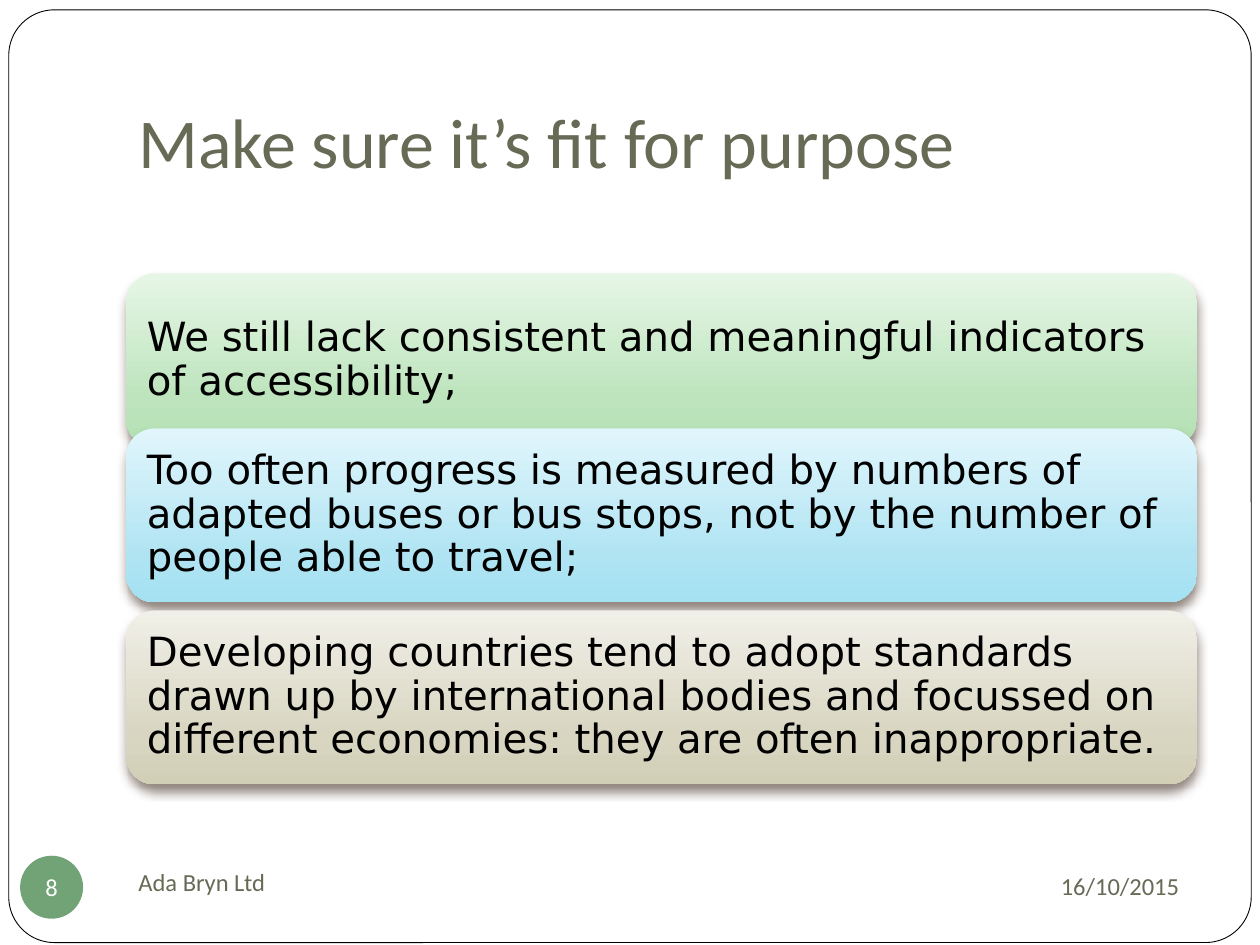
from lxml import etree
from pptx import Presentation
from pptx.dml.color import RGBColor
from pptx.enum import shapes, text
from pptx.oxml import ns
from pptx.util import Pt

HUES = {"ink": "000000", "olive": "676A55", "green": "72A376",
        "white": "FFFFFF", "shade": "4E3B30"}
STOPS = (0, 72, 100)
CARDS = [
    (156.2, ("E6F6E6", "BDE4BD", "B3E1B3"),
     "We still lack consistent and meaningful indicators of accessibility;"),
    (244.8, ("E1F6FC", "B1E4F3", "A4E1F2"),
     "Too often progress is measured by numbers of adapted buses or bus stops, "
     "not by the number of people able to travel;"),
    (348.8, ("F1F0E8", "D8D5C1", "D2CFB7"),
     "Developing countries tend to adopt standards drawn up by international bodies "
     "and focussed on different economies: they are often inappropriate."),
]
KIND = shapes.MSO_SHAPE
LEFT, MID, RIGHT = text.PP_ALIGN.LEFT, text.PP_ALIGN.CENTER, text.PP_ALIGN.RIGHT
BASE, CORE = text.MSO_ANCHOR.BOTTOM, text.MSO_ANCHOR.MIDDLE


def rgb(name):
    return RGBColor.from_string(HUES[name])


def node(parent, tag, **attrs):
    item = etree.SubElement(parent, ns.qn("a:" + tag))
    for key, value in attrs.items():
        item.set(key, str(value))
    return item


def write(shape, words, size, hue="olive", face="Calibri", align=LEFT,
          anchor=CORE, pads=(7.2, 3.6, 7.2, 3.6), wrap=True):
    """Fill a shape with one paragraph; pads run left, top, right, bottom."""
    frame = shape.text_frame
    frame.word_wrap = wrap
    frame.vertical_anchor = anchor
    (frame.margin_left, frame.margin_top,
     frame.margin_right, frame.margin_bottom) = map(Pt, pads)
    para = frame.paragraphs[0]
    para.text = words
    para.alignment = align
    para.font.size = Pt(size)
    para.font.name = face
    para.font.color.rgb = rgb(hue)
    return para


def label(slide, box, words, size, **style):
    return write(slide.shapes.add_textbox(*map(Pt, box)), words, size, **style)


def plain(slide, kind, box, hue=None):
    """Add a shape with no shadow and no outline."""
    shape = slide.shapes.add_shape(kind, *map(Pt, box))
    shape.shadow.inherit = False
    shape.line.fill.background()
    if hue:
        shape.fill.solid()
        shape.fill.fore_color.rgb = rgb(hue)
    return shape


def card(slide, top, tints, words):
    shape = plain(slide, KIND.ROUNDED_RECTANGLE, (72, top, 612, 99.4))
    shape.fill.gradient()
    shape.fill.gradient_angle = 270
    props = shape._element.spPr
    ramp = props.find(".//" + ns.qn("a:gsLst"))
    for old in list(ramp):
        ramp.remove(old)
    for stop, tint in zip(STOPS, tints):
        node(node(ramp, "gs", pos=stop * 1000), "srgbClr", val=tint)
    cast = node(props.find(ns.qn("a:effectLst")), "outerShdw", blurRad=Pt(6),
                dist=Pt(4), dir=90 * 60000, rotWithShape=0)
    node(node(cast, "srgbClr", val=HUES["shade"]), "alpha", val=60000)
    para = write(shape, words, 23, "ink", "DejaVu Sans", pads=(7.2,) * 4)
    para.line_spacing = 0.9


def main():
    deck = Presentation()
    deck.slide_width, deck.slide_height = Pt(720), Pt(540)
    slide = deck.slides.add_slide(deck.slide_layouts[6])

    frame = plain(slide, KIND.ROUNDED_RECTANGLE, (5, 5.6, 710, 533), "white")
    frame.adjustments[0] = 0.049
    frame.line.color.rgb = rgb("ink")
    frame.line.width = Pt(0.5)

    label(slide, (72, 21.6, 612, 90), "Make sure it’s fit for purpose", 40,
          anchor=BASE, pads=(7.2, 3.6, 7.2, 7.2))
    label(slide, (486, 487.5, 195, 37.5), "16/10/2015", 14, align=RIGHT)
    label(slide, (72, 486, 312, 36), "Ada Bryn Ltd", 14)
    badge = plain(slide, KIND.OVAL, (11.5, 489, 36, 36), "green")
    write(badge, "8", 14, "white", align=MID, pads=(0,) * 4, wrap=False)

    for top, tints, words in CARDS:
        card(slide, top, tints, words)
    deck.save("out.pptx")


if __name__ == "__main__":
    main()
